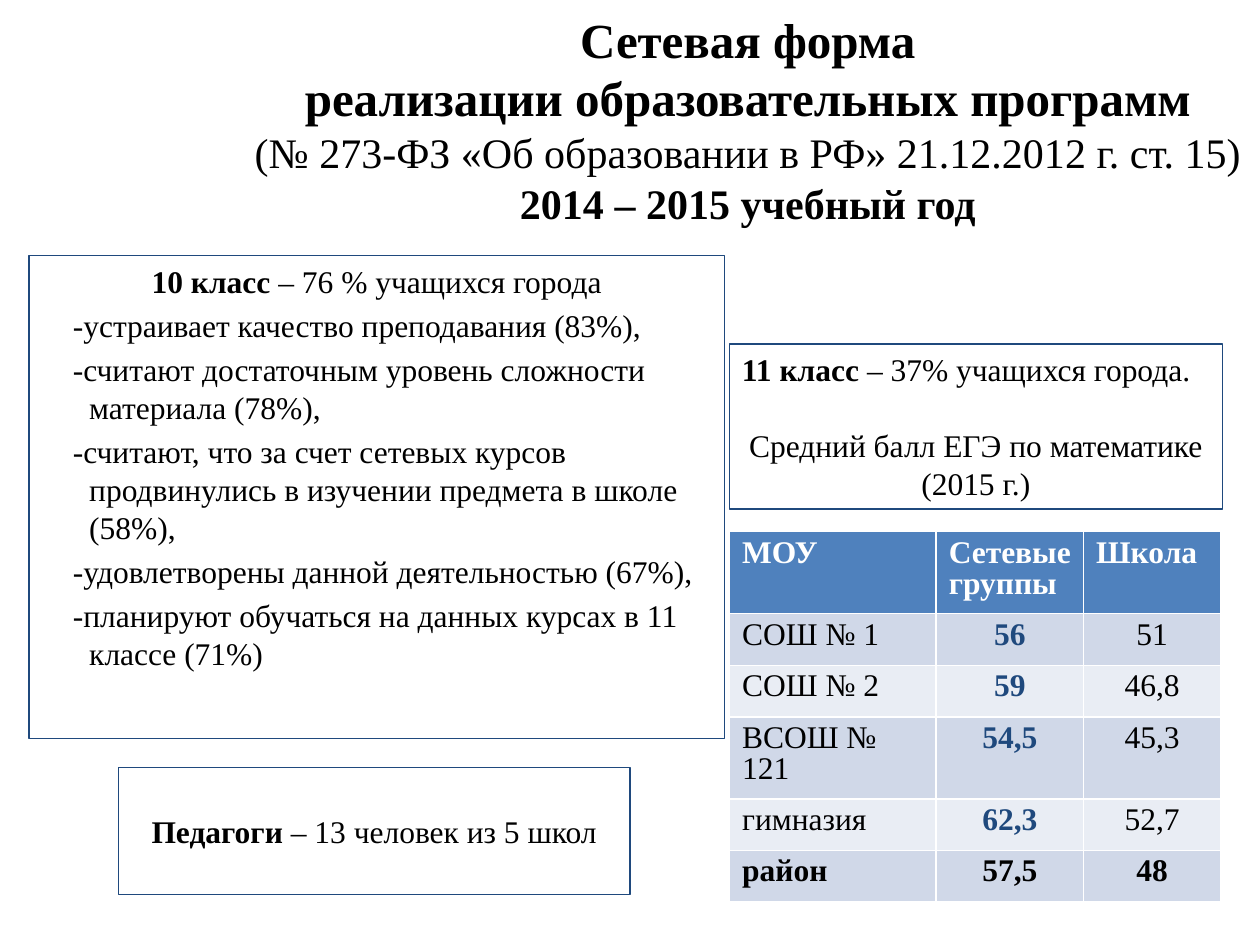
import pptx
import pptx.dml.color
import pptx.enum.shapes
import pptx.enum.text
import pptx.util

Inches = pptx.util.Inches
Pt = pptx.util.Pt
ALIGN = pptx.enum.text.PP_ALIGN
ANCHOR = pptx.enum.text.MSO_ANCHOR


def color(value):
    return pptx.dml.color.RGBColor.from_string(value)


def format_paragraph(paragraph, size, bold, alignment, ink="000000"):
    paragraph.alignment = alignment
    for run in paragraph.runs:
        run.font.name = "Times New Roman"
        run.font.size = Pt(size)
        run.font.bold = bold
        run.font.color.rgb = color(ink)


presentation = pptx.Presentation()
presentation.slide_width = Inches(10)
presentation.slide_height = Inches(7.5)
slide = presentation.slides.add_slide(presentation.slide_layouts[6])

title = slide.shapes.add_textbox(Inches(1.87), Inches(0.36), Inches(8.13), Inches(1.48))
title_frame = title.text_frame
title_frame.word_wrap = True
title_frame.vertical_anchor = ANCHOR.MIDDLE
title_frame.margin_bottom = Inches(0.37)
title_lines = [
    ("Сетевая форма", 28, True),
    ("реализации образовательных программ", 28, True),
    ("(№ 273-ФЗ «Об образовании в РФ» 21.12.2012 г. ст. 15)", 24, False),
    ("2014 – 2015 учебный год", 24, True),
]
title_frame.text = "\n".join(line[0] for line in title_lines)
for paragraph, (_, size, bold) in zip(title_frame.paragraphs, title_lines):
    format_paragraph(paragraph, size, bold, ALIGN.CENTER)

boxes = [
    ((0.23, 2.03, 5.52, 3.83), ANCHOR.TOP, ALIGN.CENTER,
     "10 класс ", "– 76 % учащихся города"),
    ((0.94, 6.09, 4.06, 1.01), ANCHOR.MIDDLE, ALIGN.CENTER,
     "Педагоги", " – 13 человек из 5 школ"),
    ((5.79, 2.73, 3.91, 1.31), ANCHOR.TOP, ALIGN.LEFT,
     "11 класс ", "– 37% учащихся города."),
]
frames = []
for position, anchor, alignment, lead, rest in boxes:
    shape = slide.shapes.add_shape(
        pptx.enum.shapes.MSO_SHAPE.RECTANGLE, *[Inches(length) for length in position])
    shape.shadow.inherit = False
    shape.fill.background()
    shape.line.color.rgb = color("1F497D")
    shape.line.width = Pt(0.75)
    frame = shape.text_frame
    frame.word_wrap = True
    frame.vertical_anchor = anchor
    frame.text = lead
    paragraph = frame.paragraphs[0]
    paragraph.add_run().text = rest
    format_paragraph(paragraph, 18, False, alignment)
    paragraph.runs[0].font.bold = True
    frames.append(frame)
survey_frame, teachers_frame, exam_frame = frames

survey_answers = [
    "-устраивает качество преподавания (83%),",
    "-считают достаточным уровень сложности материала (78%),",
    "-считают, что за счет сетевых курсов продвинулись в изучении предмета в школе (58%),",
    "-удовлетворены данной деятельностью (67%),",
    "-планируют обучаться на данных курсах в 11 классе (71%)",
]
for answer in survey_answers:
    paragraph = survey_frame.add_paragraph()
    paragraph.text = answer
    paragraph.space_before = Pt(3.6)
    properties = paragraph._p.get_or_add_pPr()
    properties.set("marL", str(Inches(0.38)))
    properties.set("indent", str(Inches(-0.13)))
    format_paragraph(paragraph, 18, False, ALIGN.LEFT)

for text, gap in [("Средний балл ЕГЭ по математике", 21.6), ("(2015 г.)", 0)]:
    paragraph = exam_frame.add_paragraph()
    paragraph.text = text
    paragraph.space_before = Pt(gap)
    format_paragraph(paragraph, 18, False, ALIGN.CENTER)

scores = [
    ("МОУ", "Сетевые группы", "Школа"),
    ("СОШ № 1", "56", "51"),
    ("СОШ № 2", "59", "46,8"),
    ("ВСОШ № 121", "54,5", "45,3"),
    ("гимназия", "62,3", "52,7"),
    ("район", "57,5", "48"),
]
table = slide.shapes.add_table(
    len(scores), 3, Inches(5.79), Inches(4.22), Inches(3.9), Inches(2.94)).table
for column, width in zip(table.columns, (1.64, 1.17, 1.09)):
    column.width = Inches(width)
for row, height in zip(table.rows, (0.65, 0.41, 0.41, 0.65, 0.41, 0.41)):
    row.height = Inches(height)
last_row = len(scores) - 1
for row_index, values in enumerate(scores):
    header = row_index == 0
    band = "4F81BD" if header else ("E9EDF4", "D0D8E8")[row_index % 2]
    for column_index, value in enumerate(values):
        cell = table.cell(row_index, column_index)
        cell.fill.solid()
        cell.fill.fore_color.rgb = color(band)
        cell.text = value
        network_score = column_index == 1 and 0 < row_index < last_row
        ink = "FFFFFF" if header else "1F497D" if network_score else "000000"
        bold = header or network_score or row_index == last_row
        alignment = ALIGN.LEFT if header or column_index == 0 else ALIGN.CENTER
        paragraph = cell.text_frame.paragraphs[0]
        paragraph.line_spacing = 0.9
        format_paragraph(paragraph, 18, bold, alignment, ink)

presentation.save("out.pptx")
